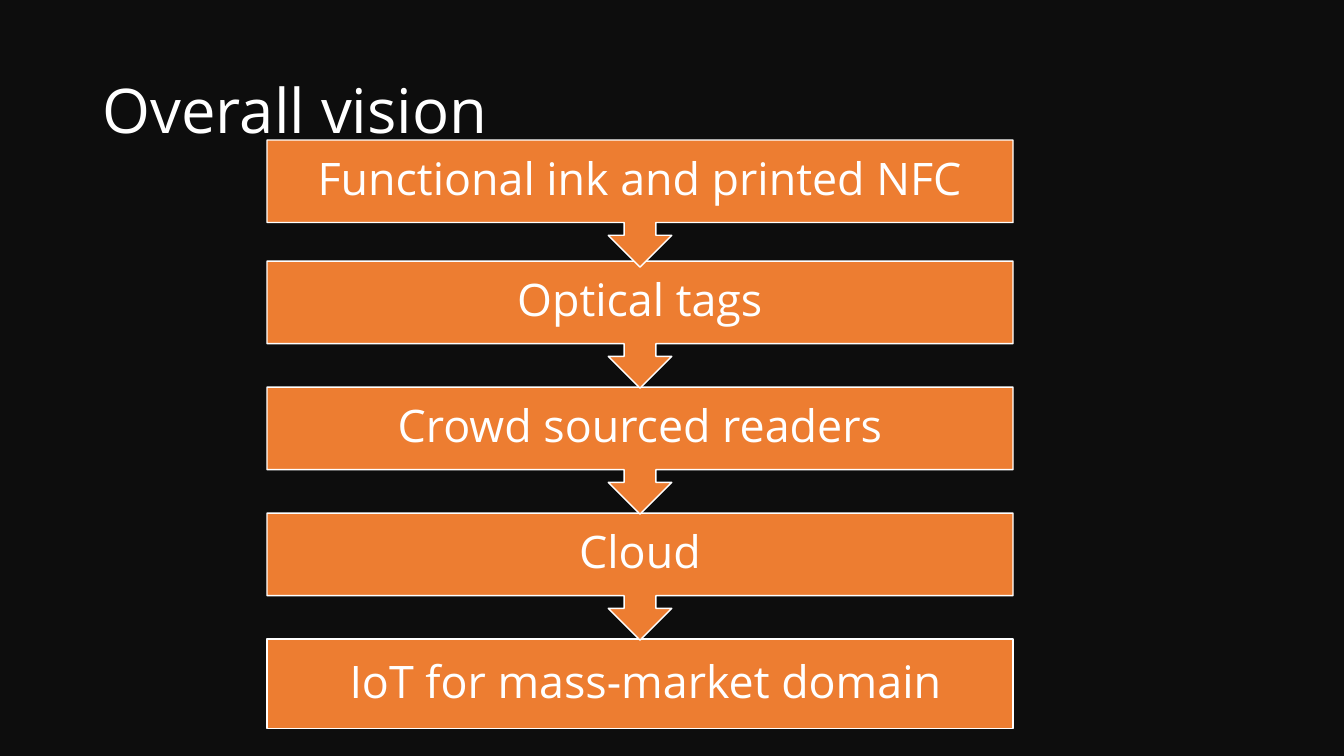
from pptx import Presentation
from pptx.dml.color import RGBColor
from pptx.enum.shapes import MSO_SHAPE
from pptx.enum.text import MSO_ANCHOR, PP_ALIGN
from pptx.util import Cm, Pt

CALLOUT = MSO_SHAPE.DOWN_ARROW_CALLOUT
RECTANGLE = MSO_SHAPE.RECTANGLE
MIDDLE = MSO_ANCHOR.MIDDLE
LEFT, CENTER = PP_ALIGN.LEFT, PP_ALIGN.CENTER

TITLE = "Overall vision"
FIRST_STAGE = "Functional ink and printed NFC"
NEXT_STAGES = ["Optical tags", "Crowd sourced readers", "Cloud"]
LAST_STAGE = " IoT for mass-market domain"

FONT = "Open Sans"
BLACK, ORANGE, WHITE = "0D0D0D", "ED7D31", "FFFFFF"

# Lengths in centimetres
STAGE_LEFT, STAGE_WIDTH = 6.73, 18.8
FIRST_TOP, SECOND_TOP, PITCH = 3.53, 6.58, 3.175
CALLOUT_HEIGHT, LAST_HEIGHT = 3.2, 2.26
SIDE_INSET = 0.63


def color(value):
    return RGBColor.from_string(value)


def write(frame, text, size, align):
    frame.word_wrap = True
    frame.vertical_anchor = MIDDLE
    para = frame.paragraphs[0]
    para.alignment = align
    para.line_spacing = 0.9
    span = para.add_run()
    span.text = text
    span.font.name = FONT
    span.font.size = Pt(size)
    span.font.color.rgb = color(WHITE)


def add_stage(page, kind, text, top, height):
    box = page.shapes.add_shape(
        kind, Cm(STAGE_LEFT), Cm(top), Cm(STAGE_WIDTH), Cm(height))
    box.shadow.inherit = False
    box.fill.solid()
    box.fill.fore_color.rgb = color(ORANGE)
    box.line.color.rgb = color(WHITE)
    box.line.width = Pt(1)
    frame = box.text_frame
    frame.margin_left = frame.margin_right = Cm(SIDE_INSET)
    frame.margin_top = frame.margin_bottom = 0
    write(frame, text, 32, CENTER)


def main():
    deck = Presentation()
    deck.slide_width, deck.slide_height = Cm(33.87), Cm(19.05)
    page = deck.slides.add_slide(deck.slide_layouts[5])
    page.background.fill.solid()
    page.background.fill.fore_color.rgb = color(BLACK)

    title = page.shapes.title
    title.left, title.top = Cm(2.33), Cm(1.01)
    title.width, title.height = Cm(29.21), Cm(3.68)
    write(title.text_frame, TITLE, 44, LEFT)

    # Drawn from the bottom up, so that each arrow tip lies over the next box
    last_top = SECOND_TOP + len(NEXT_STAGES) * PITCH
    add_stage(page, RECTANGLE, LAST_STAGE, last_top, LAST_HEIGHT)
    for index, stage in reversed(list(enumerate(NEXT_STAGES))):
        add_stage(page, CALLOUT, stage, SECOND_TOP + index * PITCH, CALLOUT_HEIGHT)
    add_stage(page, CALLOUT, FIRST_STAGE, FIRST_TOP, CALLOUT_HEIGHT)

    deck.save("out.pptx")


if __name__ == "__main__":
    main()
